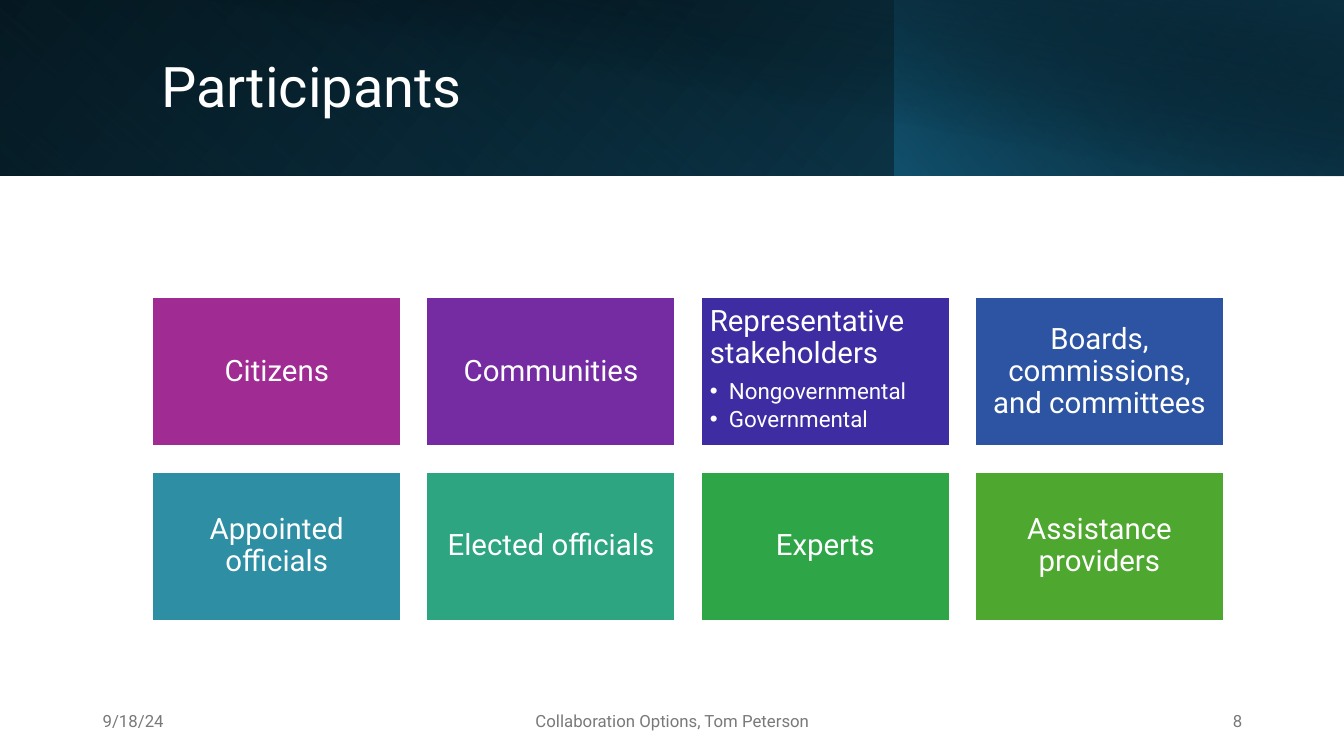
from lxml import etree
from pptx import Presentation
from pptx import util as u
from pptx.dml.color import RGBColor
from pptx.enum import shapes, text
from pptx.oxml.ns import qn

FONT = "Roboto"
WHITE = "FFFFFF"
GRAY = "797979"

# left, width, height, clockwise angle, stops of (position, colour, opacity) in percent
HEADER_BANDS = [
    (0, 13.33, 1.74, 40, [(0, "000000", 100), (100, "104862", 100)]),
    (0, 8.88, 1.74, 130, [(20, "156082", 0), (100, "0B3041", 55)]),
    (8.87, 4.46, 1.74, 320, [(0, "156082", 66), (100, "000000", 30)]),
    (0.5, 12.83, 1.75, 280, [(50, "000000", 0), (99, "0B3041", 52)]),
]
PARTICIPANTS = [
    ("Citizens", "A02B93", []),
    ("Communities", "752BA1", []),
    ("Representative stakeholders", "3D2CA2", ["Nongovernmental", "Governmental"]),
    ("Boards, commissions, and committees", "2C54A3", []),
    ("Appointed officials", "2D8EA4", []),
    ("Elected officials", "2DA581", []),
    ("Experts", "2EA648", []),
    ("Assistance providers", "4EA72E", []),
]
FOOTERS = [
    (0.92, 3, "9/18/24", text.PP_ALIGN.LEFT),
    (4.42, 4.5, "Collaboration Options, Tom Peterson", text.PP_ALIGN.CENTER),
    (9.42, 3, "8", text.PP_ALIGN.RIGHT),
]
COLUMNS = 4
TILE_LEFT, TILE_TOP = 1.51, 2.95
TILE_WIDTH, TILE_HEIGHT = 2.47, 1.48
COLUMN_STEP, ROW_STEP = 2.72, 1.73


def color(hex_string):
    return RGBColor.from_string(hex_string)


def box(left, top, width, height):
    return [u.Inches(length) for length in (left, top, width, height)]


def format_paragraph(paragraph, size, hex_color, align, line_spacing=None, space_after=0):
    paragraph.alignment = align
    paragraph.space_after = u.Pt(space_after)
    if line_spacing:
        paragraph.line_spacing = line_spacing
    for run in paragraph.runs:
        run.font.name = FONT
        run.font.size = u.Pt(size)
        run.font.color.rgb = color(hex_color)


def add_rectangle(slide, *bounds):
    shape = slide.shapes.add_shape(shapes.MSO_SHAPE.RECTANGLE, *box(*bounds))
    shape.shadow.inherit = False
    return shape


def add_gradient_band(slide, left, width, height, angle, stops):
    shape = add_rectangle(slide, left, 0, width, height)
    shape.line.fill.background()
    shape.fill.gradient()
    shape.fill.gradient_angle = 360 - angle
    for stop, (position, hex_color, _) in zip(shape.fill.gradient_stops, stops):
        stop.position = position / 100
        stop.color.rgb = color(hex_color)
    for element, (_, _, opacity) in zip(shape._element.spPr.iter(qn("a:srgbClr")), stops):
        etree.SubElement(element, qn("a:alpha"), val=str(opacity * 1000))


def add_title(slide, words):
    title = slide.shapes.title
    slide.shapes._spTree.append(title._element)  # bring in front of the bands
    title.left, title.top, title.width, title.height = box(1.5, 0.32, 10.82, 1.13)
    title.text_frame.text = words
    title.text_frame.vertical_anchor = text.MSO_ANCHOR.MIDDLE
    format_paragraph(title.text_frame.paragraphs[0], 40, WHITE, text.PP_ALIGN.LEFT, 0.9)


def add_bullet(paragraph):
    properties = paragraph._p.get_or_add_pPr()
    properties.set("marL", str(u.Inches(0.19)))
    properties.set("indent", str(u.Inches(-0.19)))
    etree.SubElement(properties, qn("a:buFont"), typeface="Arial")
    etree.SubElement(properties, qn("a:buChar"), char="•")


def add_tile(slide, left, top, label, fill, details):
    shape = add_rectangle(slide, left, top, TILE_WIDTH, TILE_HEIGHT)
    shape.fill.solid()
    shape.fill.fore_color.rgb = color(fill)
    shape.line.color.rgb = color(WHITE)
    shape.line.width = u.Pt(1.5)
    frame = shape.text_frame
    frame.word_wrap = True
    frame.margin_left = frame.margin_right = u.Inches(0.09)
    frame.margin_top = frame.margin_bottom = u.Inches(0.09)
    frame.vertical_anchor = text.MSO_ANCHOR.TOP if details else text.MSO_ANCHOR.MIDDLE
    frame.text = label
    align = text.PP_ALIGN.LEFT if details else text.PP_ALIGN.CENTER
    format_paragraph(frame.paragraphs[0], 21, WHITE, align, 0.9, 7.35 if details else 0)
    for detail in details:
        paragraph = frame.add_paragraph()
        paragraph.text = detail
        paragraph.level = 1
        format_paragraph(paragraph, 16, WHITE, align, 0.9, 2.4)
        add_bullet(paragraph)


def add_footer(slide, left, width, words, align):
    frame = slide.shapes.add_textbox(*box(left, 6.95, width, 0.4)).text_frame
    frame.word_wrap = True
    frame.vertical_anchor = text.MSO_ANCHOR.MIDDLE
    frame.text = words
    format_paragraph(frame.paragraphs[0], 12, GRAY, align)


def main():
    presentation = Presentation()
    presentation.slide_width = u.Inches(13.33)
    presentation.slide_height = u.Inches(7.5)
    slide = presentation.slides.add_slide(presentation.slide_layouts[5])
    for band in HEADER_BANDS:
        add_gradient_band(slide, *band)
    add_title(slide, "Participants")
    for index, participant in enumerate(PARTICIPANTS):
        row, column = divmod(index, COLUMNS)
        add_tile(slide, TILE_LEFT + column * COLUMN_STEP, TILE_TOP + row * ROW_STEP, *participant)
    for footer in FOOTERS:
        add_footer(slide, *footer)
    presentation.save("out.pptx")


if __name__ == "__main__":
    main()
